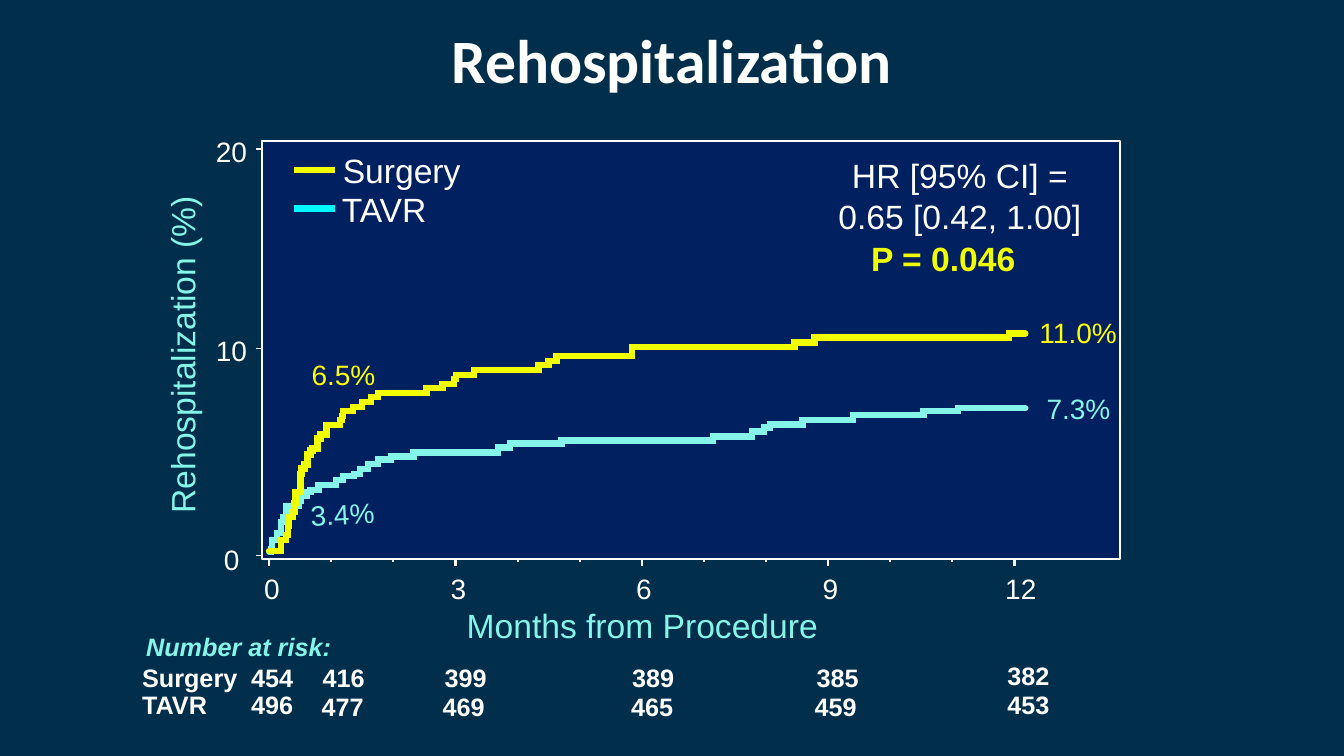
from lxml import etree
from pptx import Presentation
from pptx import util as u
from pptx.dml.color import RGBColor
from pptx.enum import shapes, text
from pptx.oxml.ns import qn

WHITE, AQUA, YELLOW, BRIGHT = "FFFFFF", "85F5E9", "F1FE00", "FFFF00"
CYAN, NAVY, BACKDROP = "00F9FF", "002060", "002E4B"

CURVE_START = (2.67, 5.47)
TAVR_STEPS = [
    (2.69, 5.45), (2.7, 5.36), (2.75, 5.29), (2.79, 5.18), (2.81, 5.13),
    (2.84, 5.02), (2.96, 4.97), (2.98, 4.92), (3.04, 4.88), (3.08, 4.86),
    (3.16, 4.81), (3.33, 4.76), (3.4, 4.72), (3.51, 4.7), (3.57, 4.65),
    (3.65, 4.6), (3.75, 4.56), (3.88, 4.53), (4.1, 4.49), (4.94, 4.44),
    (5.06, 4.4), (5.57, 4.37), (7.07, 4.33), (7.46, 4.28), (7.58, 4.24),
    (7.64, 4.21), (7.96, 4.17), (8.46, 4.12), (9.16, 4.08), (9.5, 4.05),
    (10.17, 4.05),
]
SURGERY_STEPS = [
    (2.79, 5.36), (2.84, 5.31), (2.86, 5.22), (2.87, 5.13), (2.9, 5.08),
    (2.92, 4.99), (2.93, 4.88), (2.98, 4.7), (2.99, 4.65), (3.02, 4.61),
    (3.05, 4.51), (3.08, 4.47), (3.1, 4.45), (3.15, 4.35), (3.18, 4.31),
    (3.24, 4.22), (3.37, 4.17), (3.39, 4.13), (3.4, 4.08), (3.5, 4.04),
    (3.59, 3.99), (3.68, 3.94), (3.75, 3.9), (4.23, 3.85), (4.39, 3.81),
    (4.5, 3.76), (4.52, 3.72), (4.7, 3.67), (5.34, 3.62), (5.44, 3.58),
    (5.52, 3.53), (6.27, 3.44), (7.88, 3.4), (8.08, 3.35), (10.01, 3.31),
    (10.17, 3.31),
]
CURVES = [(TAVR_STEPS, AQUA), (SURGERY_STEPS, YELLOW)]

RISK_ROWS = [
    [("Surgery", 1.41, 6.57, 0.95), ("454", 2.49, 6.57, 0.42), ("416", 3.2, 6.57, 0.42),
     ("399", 4.41, 6.57, 0.42), ("389", 6.27, 6.57, 0.42), ("385", 8.1, 6.57, 0.42),
     ("382", 9.99, 6.55, 0.42)],
    [("TAVR", 1.41, 6.84, 0.65), ("496", 2.49, 6.84, 0.42), ("477", 3.19, 6.86, 0.42),
     ("469", 4.39, 6.86, 0.42), ("465", 6.26, 6.86, 0.42), ("459", 8.08, 6.86, 0.42),
     ("453", 9.99, 6.84, 0.42)],
]
CURVE_LABELS = [
    ("7.3%", 10.38, 3.88, 0.64, AQUA, 0),
    ("11.0%", 10.31, 3.13, 0.77, BRIGHT, 0),
    ("6.5%", 3.09, 3.55, 0.64, BRIGHT, 0),
    ("3.4%", 3.08, 4.93, 0.64, AQUA, 356.9),
]
VALUE_TICKS = [("0", 2.22, 5.38, 0.16, 5.51), ("10", 2.14, 3.31, 0.32, 3.46),
               ("20", 2.14, 1.33, 0.32, 1.48)]
MONTH_LABELS = [("0", 2.62, 0.16), ("3", 4.47, 0.16), ("6", 6.31, 0.16),
                ("9", 8.16, 0.16), ("12", 9.97, 0.31)]
MONTH_ZERO, MONTH_STEP, AXIS_TOP = 2.67, 0.616, 5.56
LEGEND = [("TAVR", 3.39, 1.87, 0.87, CYAN), ("Surgery", 3.4, 1.49, 1.18, YELLOW)]

deck = Presentation()
deck.slide_width, deck.slide_height = u.Inches(13.33), u.Inches(7.5)
page = deck.slides.add_slide(deck.slide_layouts[6])


def color(value):
    return RGBColor.from_string(value)


def add_label(words, left, top, width, height, size, ink=WHITE, bold=False, italic=False,
              center=False, wrap=False, rotation=0, font="Arial"):
    box = page.shapes.add_textbox(*map(u.Inches, (left, top, width, height)))
    box.rotation = rotation
    frame = box.text_frame
    frame.margin_left = frame.margin_right = frame.margin_top = frame.margin_bottom = 0
    frame.word_wrap = wrap
    frame.text = words
    para = frame.paragraphs[0]
    para.alignment = text.PP_ALIGN.CENTER if center else text.PP_ALIGN.LEFT
    style = para.runs[0].font
    style.name, style.size, style.bold, style.italic = font, u.Pt(size), bold, italic
    style.color.rgb = color(ink)
    return box


def add_line(x1, y1, x2, y2, ink, weight):
    line = page.shapes.add_connector(shapes.MSO_CONNECTOR.STRAIGHT,
                                     *map(u.Inches, (x1, y1, x2, y2)))
    line.line.color.rgb = color(ink)
    line.line.width = u.Pt(weight)
    etree.SubElement(line._element.spPr, qn("a:effectLst"))


def add_curve(steps, ink):
    x, y = CURVE_START
    points = []
    for next_x, next_y in steps:
        points += [(u.Inches(next_x), u.Inches(y)), (u.Inches(next_x), u.Inches(next_y))]
        y = next_y
    builder = page.shapes.build_freeform(u.Inches(x), u.Inches(CURVE_START[1]))
    builder.add_line_segments(points, close=False)
    curve = builder.convert_to_shape()
    curve.shadow.inherit = False
    curve.fill.background()
    curve.line.color.rgb = color(ink)
    curve.line.width = u.Pt(4.5)
    outline = curve.line._get_or_add_ln()
    outline.set("cap", "rnd")
    etree.SubElement(outline, qn("a:miter")).set("lim", "800000")


page.background.fill.solid()
page.background.fill.fore_color.rgb = color(BACKDROP)

plot = page.shapes.add_shape(shapes.MSO_SHAPE.RECTANGLE,
                             *map(u.Inches, (2.6, 1.4, 8.51, 4.15)))
plot.shadow.inherit = False
plot.fill.solid()
plot.fill.fore_color.rgb = color(NAVY)
plot.line.color.rgb = color(WHITE)
plot.line.width = u.Pt(1.5)

title = add_label("Rehospitalization", 1, 0.17, 11.33, 0.83, 44, bold=True, center=True,
                  wrap=True, font="Calibri")
title.text_frame.vertical_anchor = text.MSO_ANCHOR.MIDDLE

add_label("Rehospitalization (%)", 0.21, 3.32, 3.19, 0.4, 24, AQUA, center=True, rotation=270)
add_label("Months from Procedure", 4.61, 6, 3.52, 0.4, 24, AQUA, center=True)
add_label("Number at risk:", 1.45, 6.26, 1.85, 0.3, 18, AQUA, bold=True, italic=True)
add_label("HR [95% CI] = 0.65 [0.42, 1.00]", 8.12, 1.54, 2.8, 0.81, 24, center=True, wrap=True)
add_label("P = 0.046", 8.64, 2.36, 1.74, 0.4, 24, YELLOW, bold=True, wrap=True)

for row in RISK_ROWS:
    for words, left, top, width in row:
        add_label(words, left, top, width, 0.3, 18, bold=True)

for steps, ink in CURVES:
    add_curve(steps, ink)

for words, left, top, width, ink, rotation in CURVE_LABELS:
    add_label(words, left, top, width, 0.34, 20, ink, rotation=rotation)

for words, left, top, width, tick in VALUE_TICKS:
    add_label(words, left, top, width, 0.31, 20)
    add_line(2.6, tick, 2.54, tick, WHITE, 1)

for month in range(13):
    x = MONTH_ZERO + month * MONTH_STEP
    length = 0.02 if month % 3 else 0.06
    add_line(x, AXIS_TOP, x, AXIS_TOP + length, WHITE, 1.5)

for words, left, width in MONTH_LABELS:
    add_label(words, left, 5.67, width, 0.34, 20)

for words, left, top, width, ink in LEGEND:
    add_label(words, left, top, width, 0.4, 24)
    add_line(2.92, top + 0.2, 3.32, top + 0.2, ink, 4.5)

deck.save("out.pptx")
